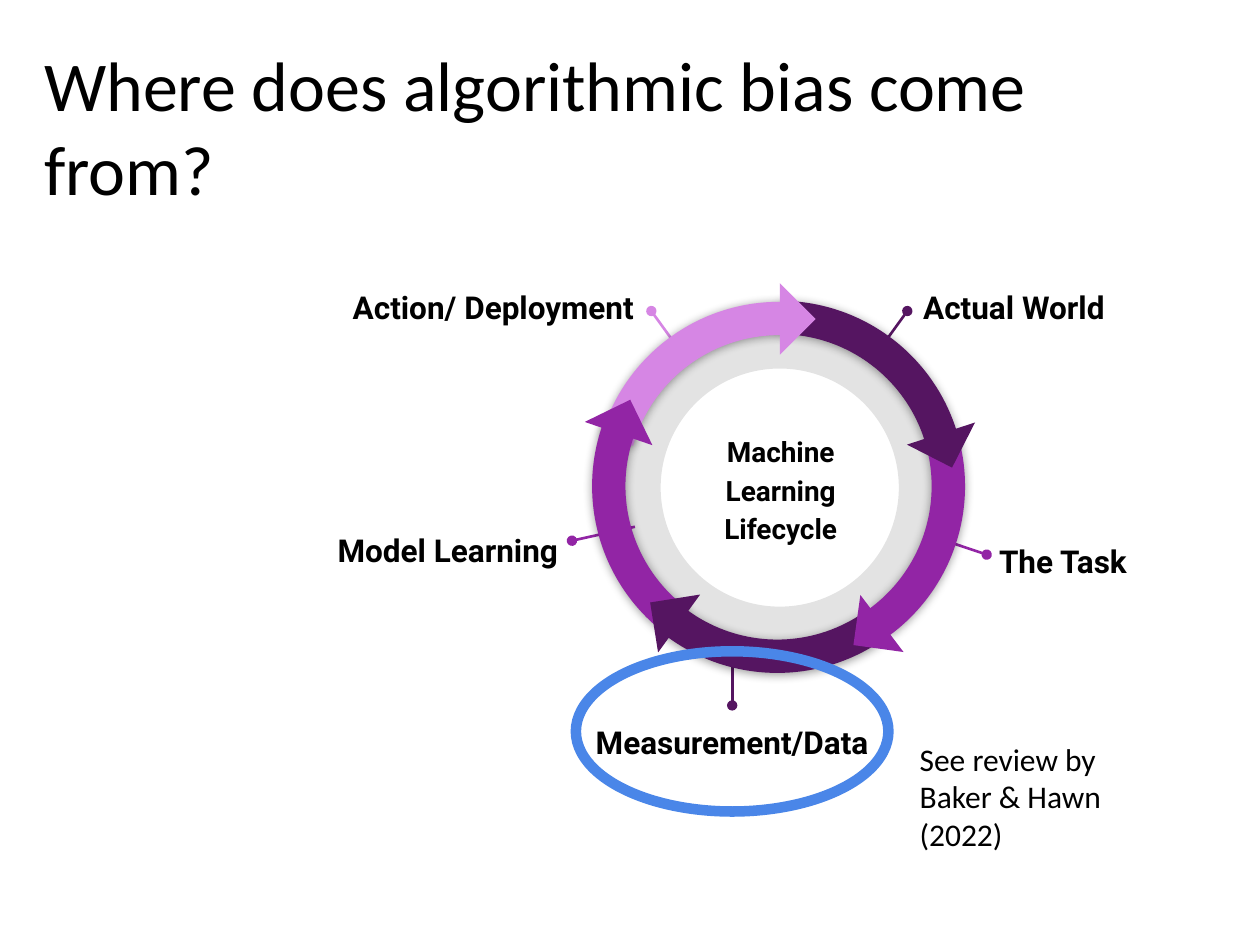
from lxml import etree
from pptx import Presentation
from pptx.dml.color import RGBColor
from pptx.enum.shapes import MSO_CONNECTOR, MSO_SHAPE
from pptx.enum.text import MSO_ANCHOR, PP_ALIGN
from pptx.oxml.ns import qn
from pptx.util import Cm, Pt

LEFT, CENTER, RIGHT = PP_ALIGN.LEFT, PP_ALIGN.CENTER, PP_ALIGN.RIGHT
TOP, MIDDLE = MSO_ANCHOR.TOP, MSO_ANCHOR.MIDDLE
DONUT, BLOCK_ARC = MSO_SHAPE.DONUT, MSO_SHAPE.BLOCK_ARC
TRIANGLE, OVAL = MSO_SHAPE.RIGHT_TRIANGLE, MSO_SHAPE.OVAL
STRAIGHT = MSO_CONNECTOR.STRAIGHT

DARK, PURPLE, PINK = "551561", "9225A5", "D686E4"
BLACK, HIGHLIGHT = "000000", "4A86E8"
ARC_SIZE, HEAD_SIZE, INSET = 7.47, 1.02, 0.25
ADJUSTMENT_PER_DEGREE = 0.6

TITLE = "Where does algorithmic bias come from?"
HUB = "Machine Learning Lifecycle"
REVIEW = "See review by\vBaker & Hawn (2022)"

STAGES = [
    ("Actual World", DARK, (18.29, 6.27), (17.53, 7.32), (18.36, 5.44, 4.83, 1.14), LEFT),
    ("Action/ Deployment", PINK, (13.13, 6.27), (13.89, 7.32), (5.97, 5.44, 7.06, 1.35), RIGHT),
    ("The Task", PURPLE, (19.89, 11.18), (18.67, 10.77), (19.89, 10.57, 4.17, 1.14), LEFT),
    ("Model Learning", PURPLE, (11.53, 10.9), (12.8, 10.62), (6.5, 10.34, 5, 1.35), RIGHT),
    ("Measurement/Data", DARK, (14.76, 14.22), (14.76, 12.85), (11.23, 14.22, 7.06, 1.85), CENTER),
]
ARCS = [
    (DARK, (15.72, 9.8), 30, False, 240.24, 316.64, 0.09),
    (PURPLE, (15.72, 9.8), 210, True, 336.31, 43.73, 0.09),
    (PINK, (15.71, 9.82), 330, True, 238.9, 314.25, 0.09),
    (PURPLE, (15.67, 9.8), 150, False, 336.41, 50.12, 0.09),
    (DARK, (15.67, 9.83), 210, True, 262.31, 333.47, 0.09),
]
HEADS = [
    (DARK, (18.97, 8.74), 297),
    (PURPLE, (12.47, 8.74), 154),
    (PURPLE, (17.78, 12.57), 7.9),
    (DARK, (13.69, 12.57), 81),
    (PINK, (15.72, 6.43), 225),
]


def rgb(colour):
    return RGBColor.from_string(colour)


def square(centre, size):
    return centre[0] - size / 2, centre[1] - size / 2, size, size


def add_preset(shapes, preset, box, fill=None, rotation=0):
    shape = shapes.add_shape(preset, *map(Cm, box))
    shape.shadow.inherit = False
    shape.rotation = rotation
    shape.line.fill.background()
    if fill:
        shape.fill.solid()
        shape.fill.fore_color.rgb = rgb(fill)
    else:
        shape.fill.background()
    return shape


def add_label(shapes, text, box, size, font="Roboto", bold=True, align=LEFT,
              anchor=TOP, spacing=1.15):
    frame = shapes.add_textbox(*map(Cm, box)).text_frame
    frame.word_wrap = True
    frame.vertical_anchor = anchor
    frame.margin_left = frame.margin_right = Cm(INSET)
    frame.margin_top = frame.margin_bottom = Cm(INSET)
    frame.text = text
    paragraph = frame.paragraphs[0]
    paragraph.alignment = align
    paragraph.line_spacing = spacing
    for run in paragraph.runs:
        run.font.name = font
        run.font.size = Pt(size)
        run.font.bold = bold
        run.font.color.rgb = rgb(BLACK)


def add_alpha(parent, percent):
    etree.SubElement(parent, qn("a:alpha"), val=str(percent * 1000))


def add_pointer(shapes, start, end, colour):
    pointer = shapes.add_connector(STRAIGHT, *map(Cm, start + end))
    pointer.line.color.rgb = rgb(colour)
    pointer.line.width = Pt(1.5)
    etree.SubElement(pointer.line._get_or_add_ln(), qn("a:headEnd"), type="oval")
    etree.SubElement(pointer._element.spPr, qn("a:effectLst"))


def add_arc(shapes, colour, centre, rotation, mirrored, start, end, thickness):
    arc = add_preset(shapes, BLOCK_ARC, square(centre, ARC_SIZE), colour, rotation)
    arc.adjustments[0] = start * ADJUSTMENT_PER_DEGREE
    arc.adjustments[1] = end * ADJUSTMENT_PER_DEGREE
    arc.adjustments[2] = thickness
    properties = arc._element.spPr
    if mirrored:
        properties.find(qn("a:xfrm")).set("flipH", "1")
    shadow = etree.SubElement(
        properties.find(qn("a:effectLst")), qn("a:outerShdw"),
        blurRad=str(Pt(5.6)), dist=str(Pt(0.8)), dir="5400000", rotWithShape="0")
    add_alpha(etree.SubElement(shadow, qn("a:srgbClr"), val=BLACK), 40)


def main():
    deck = Presentation()
    deck.slide_width, deck.slide_height = Cm(25.4), Cm(19.05)
    shapes = deck.slides.add_slide(deck.slide_layouts[6]).shapes

    track = add_preset(shapes, DONUT, (12.19, 6.3, 7.06, 7.06), BLACK)
    track.adjustments[0] = 0.16
    add_alpha(track._element.spPr.find(qn("a:solidFill"))[0], 11)

    for label, colour, start, end, box, align in STAGES:
        stage = shapes.add_group_shape().shapes
        add_pointer(stage, start, end, colour)
        add_label(stage, label, box, 18, align=align)

    for arc in ARCS:
        add_arc(shapes, *arc)
    add_label(shapes, HUB, (13.39, 8.71, 4.7, 2.24), 16, align=CENTER, anchor=MIDDLE)
    for colour, centre, rotation in HEADS:
        add_preset(shapes, TRIANGLE, square(centre, HEAD_SIZE), colour, rotation)

    highlight = add_preset(shapes, OVAL, (11.61, 13.13, 6.3, 3.23))
    highlight.line.color.rgb = rgb(HIGHLIGHT)
    highlight.line.width = Pt(6)

    for text, box, size in (
        (REVIEW, (18.29, 14.66, 5.23, 2.82), 18),
        (TITLE, (0.64, 0.58, 23.67, 1.6), 40),
    ):
        add_label(shapes, text, box, size, "Calibri", False, spacing=1)

    deck.save("out.pptx")


if __name__ == "__main__":
    main()
